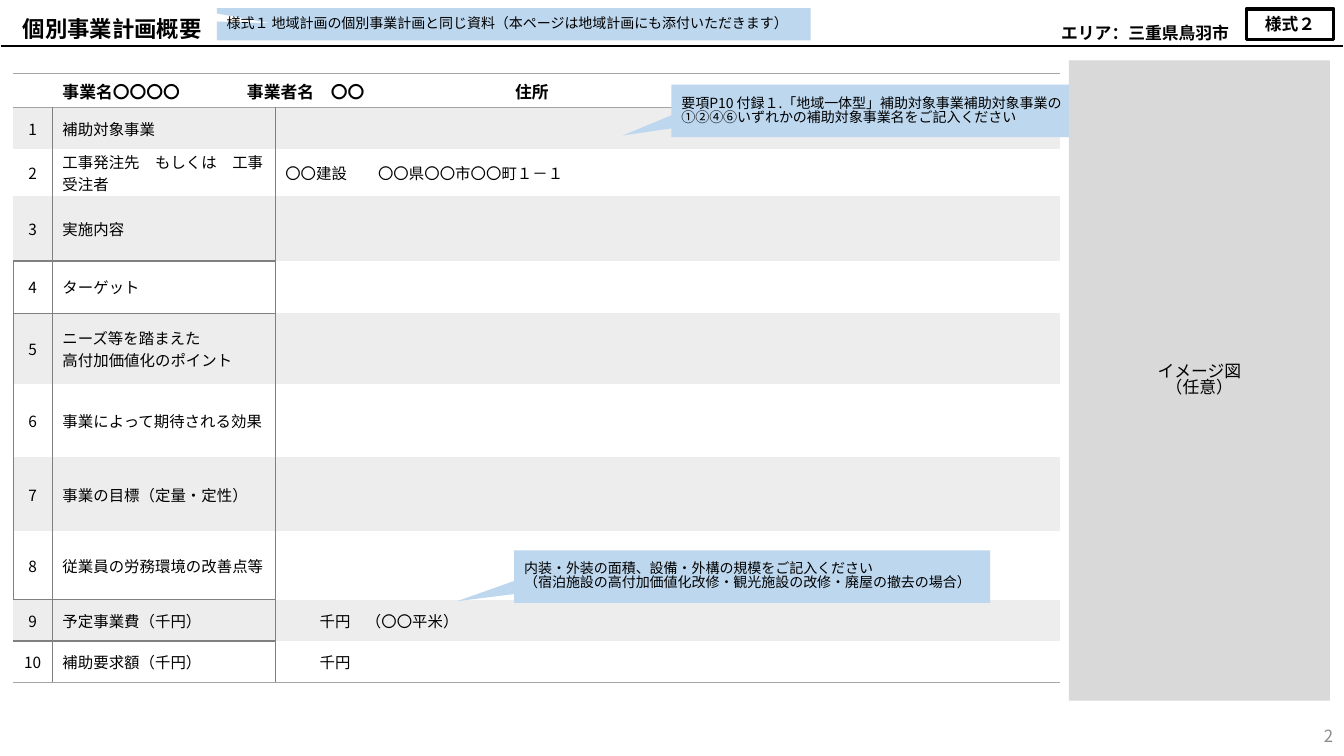
from lxml import etree
from pptx import Presentation
from pptx import util as u
from pptx.dml.color import RGBColor
from pptx.enum import shapes, text
from pptx.oxml.ns import qn

BLACK = RGBColor(0x00, 0x00, 0x00)
BAND = RGBColor(0xED, 0xED, 0xED)
RULE = RGBColor(0x80, 0x80, 0x80)
EDGE = RGBColor(0xA5, 0xA5, 0xA5)
NOTE = RGBColor(0xBD, 0xD7, 0xEE)
PANEL = RGBColor(0xD9, 0xD9, 0xD9)
NUMBER = RGBColor(0x8C, 0x8C, 0x8C)

WIDTH, HEIGHT = u.Inches(13.33), u.Inches(7.5)
COLUMNS, ROWS = 133.3, 75
NO_STYLE = "{2D5ABB26-0587-4C30-8999-92F81FD0307C}"
LEFT, CENTER, RIGHT = text.PP_ALIGN.LEFT, text.PP_ALIGN.CENTER, text.PP_ALIGN.RIGHT
TOP, MIDDLE = text.MSO_ANCHOR.TOP, text.MSO_ANCHOR.MIDDLE


class Sheet:
    """Draws styled elements on one slide, placed by grid columns and rows."""

    font = "Noto Sans CJK JP"

    def __init__(self, prs):
        self.s = prs.slides.add_slide(prs.slide_layouts[6])

    def x(self, columns):
        return u.Emu(round(WIDTH * columns / COLUMNS))

    def y(self, rows):
        return u.Emu(round(HEIGHT * rows / ROWS))

    def box(self, left, top, width, height):
        return self.x(left), self.y(top), self.x(width), self.y(height)

    def add_text(self, tf, paragraphs, size, bold=False, color=BLACK, align=LEFT, spacing=None):
        for i, content in enumerate(paragraphs):
            p = tf.paragraphs[0] if i == 0 else tf.add_paragraph()
            p.alignment = align
            if spacing:
                p.line_spacing = spacing
            for j, line in enumerate(content.split("\n")):
                if j:
                    p.add_line_break()
                r = p.add_run()
                r.text = line
                r.font.size, r.font.bold = u.Pt(size), bold
                r.font.name = self.font
                r.font.color.rgb = color
                etree.SubElement(r.font._element, qn("a:ea"), typeface=self.font)

    def label(self, place, words, size, anchor=TOP, **style):
        tf = self.s.shapes.add_textbox(*self.box(*place)).text_frame
        tf.word_wrap, tf.vertical_anchor = True, anchor
        self.add_text(tf, [words], size, **style)

    def shape(self, kind, place, paragraphs, size, fill=None, line=None, tail=None, **style):
        sp = self.s.shapes.add_shape(kind, *self.box(*place))
        sp.shadow.inherit = False
        if fill is None:
            sp.fill.background()
        else:
            sp.fill.solid()
            sp.fill.fore_color.rgb = fill
        if line is None:
            sp.line.fill.background()
        else:
            sp.line.color.rgb, sp.line.width = BLACK, u.Pt(line)
        for i, value in enumerate(tail or ()):
            sp.adjustments[i] = value
        tf = sp.text_frame
        tf.word_wrap, tf.vertical_anchor = True, MIDDLE
        self.add_text(tf, paragraphs, size, **style)

    def callout(self, place, words, tail):
        self.shape(shapes.MSO_SHAPE.RECTANGULAR_CALLOUT, place, [words], 10,
                   fill=NOTE, tail=tail, spacing=0.83)

    def rule(self, x1, x2, row, width):
        ln = self.s.shapes.add_connector(shapes.MSO_CONNECTOR.STRAIGHT,
                                         self.x(x1), self.y(row), self.x(x2), self.y(row))
        ln.line.color.rgb, ln.line.width = BLACK, u.Pt(width)
        etree.SubElement(ln._element.spPr, qn("a:effectLst"))

    def table(self, place, widths, heights):
        frame = self.s.shapes.add_table(len(heights), len(widths), *self.box(*place))
        tbl = frame.table
        tbl.first_row = tbl.horz_banding = False
        tbl._tbl.tblPr.find(qn("a:tableStyleId")).text = NO_STYLE
        for column, width in zip(tbl.columns, widths):
            column.width = self.x(width)
        for row, height in zip(tbl.rows, heights):
            row.height = self.y(height)
        return tbl

    def cell(self, cell, paragraphs, size, fill=None, borders=None, **style):
        cell.margin_top = cell.margin_bottom = 0
        cell.vertical_anchor = MIDDLE
        tcPr = cell._tc.get_or_add_tcPr()
        for side in "LRTB":
            if side in (borders or {}):
                color, width = borders[side]
                ln = etree.SubElement(tcPr, qn("a:ln" + side), w=str(u.Pt(width)))
                solid = etree.SubElement(ln, qn("a:solidFill"))
                etree.SubElement(solid, qn("a:srgbClr"), val=str(color))
        if fill is None:
            cell.fill.background()
        else:
            cell.fill.solid()
            cell.fill.fore_color.rgb = fill
        self.add_text(cell.text_frame, paragraphs, size, **style)

    def indent(self, cell, columns):
        cell.text_frame.paragraphs[0]._p.get_or_add_pPr().set("marL", str(self.x(columns)))

    def tabs(self, cell, stops):
        pPr = cell.text_frame.paragraphs[0]._p.get_or_add_pPr()
        tabs = etree.SubElement(pPr, qn("a:tabLst"))
        for stop in stops:
            etree.SubElement(tabs, qn("a:tab"), pos=str(self.x(stop)), algn="l")


ITEMS = [
    (4.1, ["補助対象事業"], []),
    (4.7, ["工事発注先　もしくは　工事受注者"], ["〇〇建設\t〇〇県〇〇市〇〇町１－１"]),
    (6.4, ["実施内容"], []),
    (5.2, ["ターゲット"], []),
    (7, ["ニーズ等を踏まえた", "高付加価値化のポイント"], []),
    (7.3, ["事業によって期待される効果"], []),
    (7.3, ["事業の目標（定量・定性）"], []),
    (6.8, ["従業員の労務環境の改善点等"], []),
    (4.1, ["予定事業費（千円）"], ["千円　（〇〇平米）"]),
    (4.1, ["補助要求額（千円）"], ["千円"]),
]
FRAMED = range(4, 9)


def plan_table(sheet):
    heights = [3.4] + [item[0] for item in ITEMS]
    tbl = sheet.table((1.3, 7.3, 103.8, sum(heights)), [3.9, 22.1, 77.8], heights)
    edges = {"T": (EDGE, 1), "B": (EDGE, 1)}
    tbl.cell(0, 1).merge(tbl.cell(0, 2))
    heading = [[], ["事業名〇〇〇〇\t事業者名　〇〇\t住所"], []]
    for c, words in enumerate(heading):
        sheet.cell(tbl.cell(0, c), words, 12, borders=edges, bold=True)
    sheet.tabs(tbl.cell(0, 1), [18.3, 44.9])

    for n, (_, name, value) in enumerate(ITEMS, 1):
        thin, side = (RULE, 0.5), (RULE, 1 if n in FRAMED else 0.5)
        columns = [([str(n)], CENTER, {"R": thin}),
                   (name, LEFT, {"L": thin, "R": side}),
                   (value, LEFT, {"L": side})]
        if n in FRAMED:
            columns[0][2]["L"] = side
        for c, (words, align, borders) in enumerate(columns):
            if c < 2 and n in (FRAMED[0], FRAMED[-1] + 1):
                borders["T"] = (RULE, 1)
            if c < 2 and n in (FRAMED[0] - 1, FRAMED[-1]):
                borders["B"] = (RULE, 1)
            if n == len(ITEMS):
                borders["B"] = (EDGE, 1)
            sheet.cell(tbl.cell(n, c), words, 11, BAND if n % 2 else None, borders, align=align)
    sheet.tabs(tbl.cell(2, 2), [9.2])
    for n in (9, 10):
        sheet.indent(tbl.cell(n, 2), 3.4)


def main():
    prs = Presentation()
    prs.slide_width, prs.slide_height = WIDTH, HEIGHT
    sheet = Sheet(prs)
    sheet.label((1.3, 1, 130, 3.7), "個別事業計画概要", 16, bold=True)
    sheet.rule(0.1, 133.2, 4.6, 1.5)
    plan_table(sheet)
    sheet.label((103.2, 71, 30, 4), "2", 12, MIDDLE, color=NUMBER, align=RIGHT)
    sheet.label((89.6, 0.8, 33.3, 3.8), "エリア：三重県鳥羽市", 12,
                bold=True, align=RIGHT, spacing=1.5)
    sheet.callout((21.5, 0.8, 58.9, 3.2),
                  "様式１ 地域計画の個別事業計画と同じ資料（本ページは地域計画にも添付いただきます）",
                  (-0.41, -0.03))
    rect = shapes.MSO_SHAPE.RECTANGLE
    sheet.shape(rect, (123.6, 0.9, 8.7, 3), ["様式２"], 12, line=2.25, bold=True, align=CENTER)
    tail = (-0.62, 0.47)
    sheet.callout((66.6, 8.4, 40.4, 5.2),
                  "要項P10 付録１.「地域一体型」補助対象事業補助対象事業の①②④⑥いずれかの補助対象事業名をご記入ください",
                  tail)
    sheet.shape(rect, (106, 6, 25.9, 63.5), ["イメージ図", "（任意）"], 12,
                fill=PANEL, align=CENTER, spacing=0.83)
    sheet.callout((51, 54.6, 47.2, 5.2),
                  "内装・外装の面積、設備・外構の規模をご記入ください\n（宿泊施設の高付加価値化改修・観光施設の改修・廃屋の撤去の場合）",
                  tail)
    prs.save("out.pptx")


if __name__ == "__main__":
    main()
